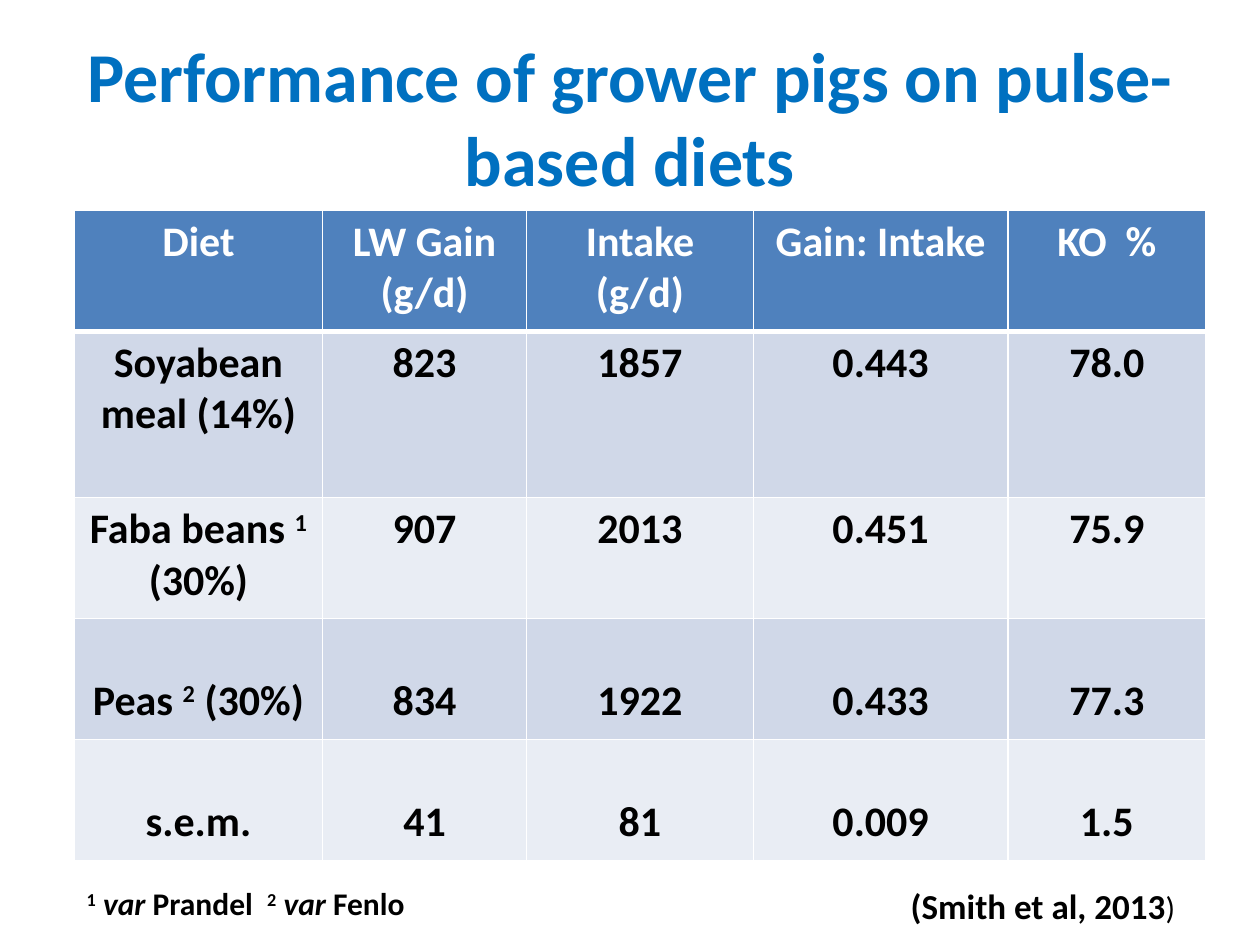
from dataclasses import dataclass
from typing import NamedTuple

from pptx import Presentation
from pptx.dml.color import RGBColor
from pptx.enum.text import MSO_ANCHOR as Anchor, PP_ALIGN as Align
from pptx.oxml.ns import qn
from pptx.util import Inches, Pt
from lxml.etree import SubElement


@dataclass(frozen=True)
class Theme:
    font: str = "Calibri"
    title: str = "0070C0"
    header: str = "4F81BD"
    bands: tuple = ("D0D8E8", "E9EDF4")
    white: str = "FFFFFF"
    black: str = "000000"
    title_size: int = 40
    table_size: int = 24
    source_size: int = 20
    note_size: int = 18
    thin_line: int = 1
    thick_line: int = 3


THEME = Theme()


class Piece(NamedTuple):
    text: str
    raised: bool = False
    italic: bool = False
    bold: bool = True
    size: int | None = None


class Box(NamedTuple):
    left: float
    top: float
    width: float
    height: float


class DietRow(NamedTuple):
    height: float
    cells: tuple
    anchor: Anchor = Anchor.TOP


COLUMN_WIDTHS = (1.97, 1.62, 1.8, 2.02, 1.57)
DIET_ROWS = (
    DietRow(0.96, ("Diet", "LW Gain\n(g/d)", "Intake\n(g/d)", "Gain: Intake", "KO  %")),
    DietRow(1.32, ("Soyabean meal (14%)", "823", "1857", "0.443", "78.0")),
    DietRow(0.96, ((Piece("Faba beans "), Piece("1", raised=True), Piece(" (30%)")),
                   "907", "2013", "0.451", "75.9")),
    DietRow(0.96, ((Piece("Peas "), Piece("2", raised=True), Piece(" (30%)")),
                   "834", "1922", "0.433", "77.3"), Anchor.BOTTOM),
    DietRow(0.96, ("s.e.m.", "41", "81", "0.009", "1.5"), Anchor.BOTTOM),
)
VARIETY_NOTE = (
    Piece("1", raised=True), Piece(" var", italic=True), Piece(" Prandel  "),
    Piece("2", raised=True), Piece(" var", italic=True), Piece(" Fenlo"),
)
SOURCE = (Piece("(Smith et al, 2013"), Piece(")", bold=False, size=THEME.note_size))


def write_text(frame, text: str | tuple, *, size: int, color: str = THEME.black,
               align: Align = Align.LEFT) -> None:
    lines = [(Piece(line),) for line in text.split("\n")] if isinstance(text, str) else [text]
    for index, pieces in enumerate(lines):
        paragraph = frame.add_paragraph() if index else frame.paragraphs[0]
        paragraph.alignment = align
        for piece in pieces:
            run = paragraph.add_run()
            run.text = piece.text
            font = run.font
            font.name = THEME.font
            font.size = Pt(piece.size or size)
            font.bold = piece.bold
            font.italic = piece.italic
            font.color.rgb = RGBColor.from_string(color)
            if piece.raised:
                run._r.get_or_add_rPr().set("baseline", "30000")


def add_text(slide, box: Box, text: str | tuple, *, anchor: Anchor = Anchor.TOP, **text_format) -> None:
    frame = slide.shapes.add_textbox(*map(Inches, box)).text_frame
    frame.word_wrap = True
    frame.vertical_anchor = anchor
    write_text(frame, text, **text_format)


def set_borders(cell, top: int, bottom: int) -> None:
    properties = cell._tc.get_or_add_tcPr()
    widths = {"L": THEME.thin_line, "R": THEME.thin_line, "T": top, "B": bottom}
    for side, width in widths.items():
        line = SubElement(properties, qn(f"a:ln{side}"), w=str(Pt(width)))
        fill = SubElement(line, qn("a:solidFill"))
        SubElement(fill, qn("a:srgbClr"), val=THEME.white)


def add_diet_table(slide, left: float, top: float) -> None:
    width = sum(COLUMN_WIDTHS)
    height = sum(row.height for row in DIET_ROWS)
    table = slide.shapes.add_table(
        len(DIET_ROWS), len(COLUMN_WIDTHS), *map(Inches, (left, top, width, height))
    ).table
    for column, column_width in zip(table.columns, COLUMN_WIDTHS):
        column.width = Inches(column_width)
    for row_index, row in enumerate(DIET_ROWS):
        table.rows[row_index].height = Inches(row.height)
        is_header = row_index == 0
        fill_color = THEME.header if is_header else THEME.bands[(row_index - 1) % 2]
        for column_index, text in enumerate(row.cells):
            cell = table.cell(row_index, column_index)
            set_borders(cell,
                        top=THEME.thick_line if row_index == 1 else THEME.thin_line,
                        bottom=THEME.thick_line if is_header else THEME.thin_line)
            cell.fill.solid()
            cell.fill.fore_color.rgb = RGBColor.from_string(fill_color)
            cell.vertical_anchor = row.anchor
            if row.anchor == Anchor.BOTTOM:
                cell.margin_bottom = Inches(0.1)
            write_text(cell.text_frame, text, size=THEME.table_size, align=Align.CENTER,
                       color=THEME.white if is_header else THEME.black)


def main() -> None:
    presentation = Presentation()
    presentation.slide_width = Inches(10)
    presentation.slide_height = Inches(7.5)
    slide = presentation.slides.add_slide(presentation.slide_layouts[6])
    add_text(slide, Box(0.5, 0.3, 9, 1.25), "Performance of grower pigs on pulse-based diets",
             size=THEME.title_size, color=THEME.title, align=Align.CENTER, anchor=Anchor.MIDDLE)
    add_diet_table(slide, left=0.59, top=1.67)
    add_text(slide, Box(0.59, 6.97, 4.8, 0.4), VARIETY_NOTE, size=THEME.note_size)
    add_text(slide, Box(7.13, 6.97, 2.6, 0.44), SOURCE, size=THEME.source_size)
    presentation.save("out.pptx")


if __name__ == "__main__":
    main()
